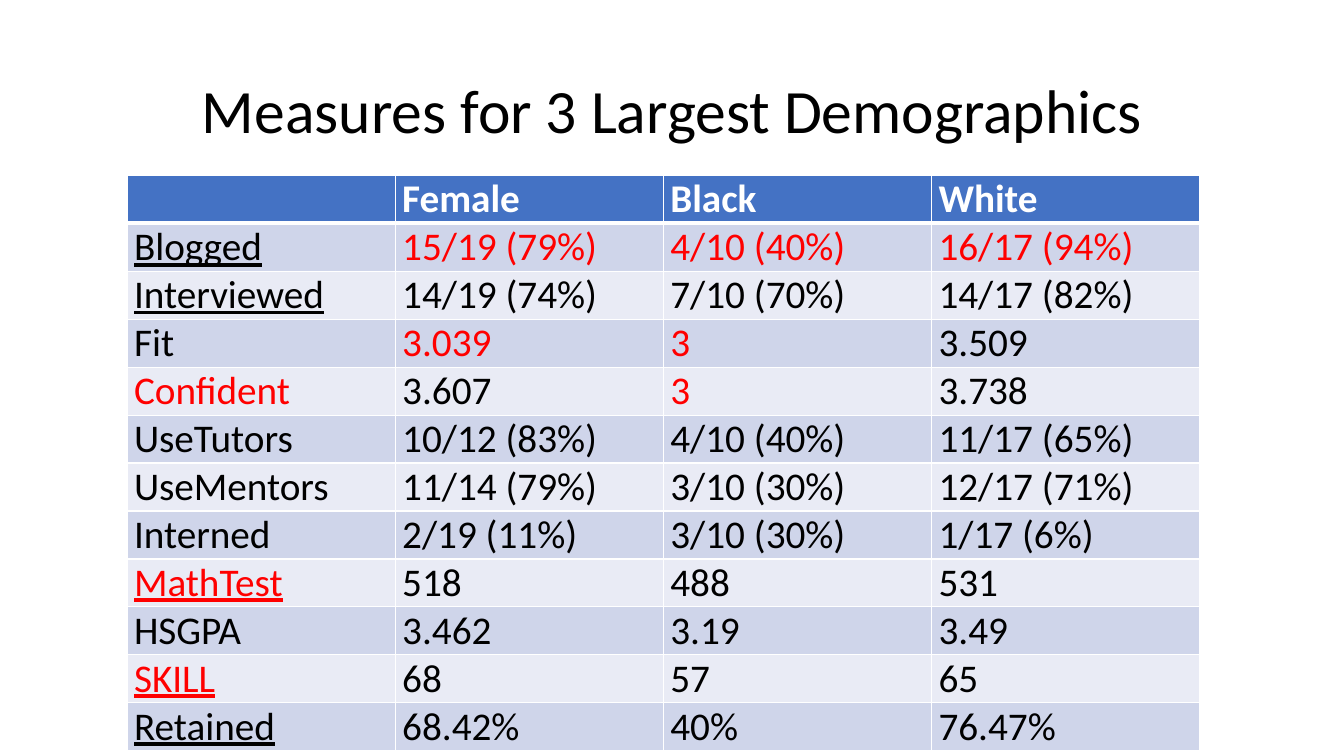
"""Build a slide with a table of measures for three demographics."""
import lxml.etree
import pptx
import pptx.dml.color
import pptx.enum.text
import pptx.oxml.ns
import pptx.util

WIDE, HIGH = pptx.util.Inches(13.33), pptx.util.Inches(7.5)
FONT = "Calibri"
HUES = {"ink": "000000", "red": "FF0000", "white": "FFFFFF",
        "head": "4472C4", "odd": "CFD5EA", "even": "E9EBF5"}
RED, LINE = "!", "_"
ROWS = [
    ["", "Female", "Black", "White"],
    ["_Blogged", "!15/19 (79%)", "!4/10 (40%)", "!16/17 (94%)"],
    ["_Interviewed", "14/19 (74%)", "7/10 (70%)", "14/17 (82%)"],
    ["Fit", "!3.039", "!3", "3.509"],
    ["!Confident", "3.607", "!3", "3.738"],
    ["UseTutors", "10/12 (83%)", "4/10 (40%)", "11/17 (65%)"],
    ["UseMentors", "11/14 (79%)", "3/10 (30%)", "12/17 (71%)"],
    ["Interned", "2/19 (11%)", "3/10 (30%)", "1/17 (6%)"],
    ["!_MathTest", "518", "488", "531"],
    ["HSGPA", "3.462", "3.19", "3.49"],
    ["!_SKILL", "68", "57", "65"],
    ["_Retained", "68.42%", "40%", "76.47%"],
]


def tint(name):
    """Return the named colour."""
    return pptx.dml.color.RGBColor.from_string(HUES[name])


def style(para, size, hue, align):
    """Set the font and alignment of a paragraph."""
    para.alignment = align
    para.font.name = FONT
    para.font.size = pptx.util.Pt(size)
    para.font.color.rgb = tint(hue)


def edge(cell, side, width):
    """Draw one white border of a cell."""
    qn = pptx.oxml.ns.qn
    line = lxml.etree.SubElement(cell._tc.get_or_add_tcPr(), qn(f"a:ln{side}"),
                                 w=str(pptx.util.Pt(width)))
    fill = lxml.etree.SubElement(line, qn("a:solidFill"))
    lxml.etree.SubElement(fill, qn("a:srgbClr"), val=HUES["white"])


def fill_cell(cell, mark, row):
    """Write a marked text into a cell and format it."""
    head = row == 0
    for side in "LRTB":
        thick = (side, row) in (("B", 0), ("T", 1))
        edge(cell, side, 3 if thick else 1)
    cell.fill.solid()
    cell.fill.fore_color.rgb = tint("head" if head else "odd" if row % 2 else "even")
    cell.margin_left = cell.margin_right = pptx.util.Inches(0.07)
    cell.margin_top = cell.margin_bottom = 0
    cell.vertical_anchor = pptx.enum.text.MSO_ANCHOR.BOTTOM
    cell.text = mark.lstrip(RED + LINE)
    para = cell.text_frame.paragraphs[0]
    hue = "white" if head else "red" if RED in mark else "ink"
    style(para, 28, hue, pptx.enum.text.PP_ALIGN.JUSTIFY)
    para.font.bold = head
    para.font.underline = LINE in mark


def add_title(slide, text):
    """Add the centred title."""
    box = slide.shapes.add_textbox(int(WIDE * 0.069), int(HIGH * 0.053),
                                   int(WIDE * 0.863), int(HIGH * 0.193))
    frame = box.text_frame
    frame.word_wrap = True
    frame.vertical_anchor = pptx.enum.text.MSO_ANCHOR.MIDDLE
    frame.text = text
    para = frame.paragraphs[0]
    style(para, 44, "ink", pptx.enum.text.PP_ALIGN.CENTER)
    para.line_spacing = 0.9


def add_grid(slide, rows):
    """Add the table of measures."""
    grid = slide.shapes.add_table(
        len(rows), len(rows[0]), pptx.util.Inches(1.26), pptx.util.Inches(1.74),
        pptx.util.Inches(10.64), pptx.util.Inches(5.71)).table
    for r, row in enumerate(rows):
        for c, mark in enumerate(row):
            fill_cell(grid.cell(r, c), mark, r)


def main():
    """Build and save the slide."""
    deck = pptx.Presentation()
    deck.slide_width, deck.slide_height = WIDE, HIGH
    slide = deck.slides.add_slide(deck.slide_layouts[6])
    add_title(slide, "Measures for 3 Largest Demographics")
    add_grid(slide, ROWS)
    deck.save("out.pptx")


if __name__ == "__main__":
    main()
